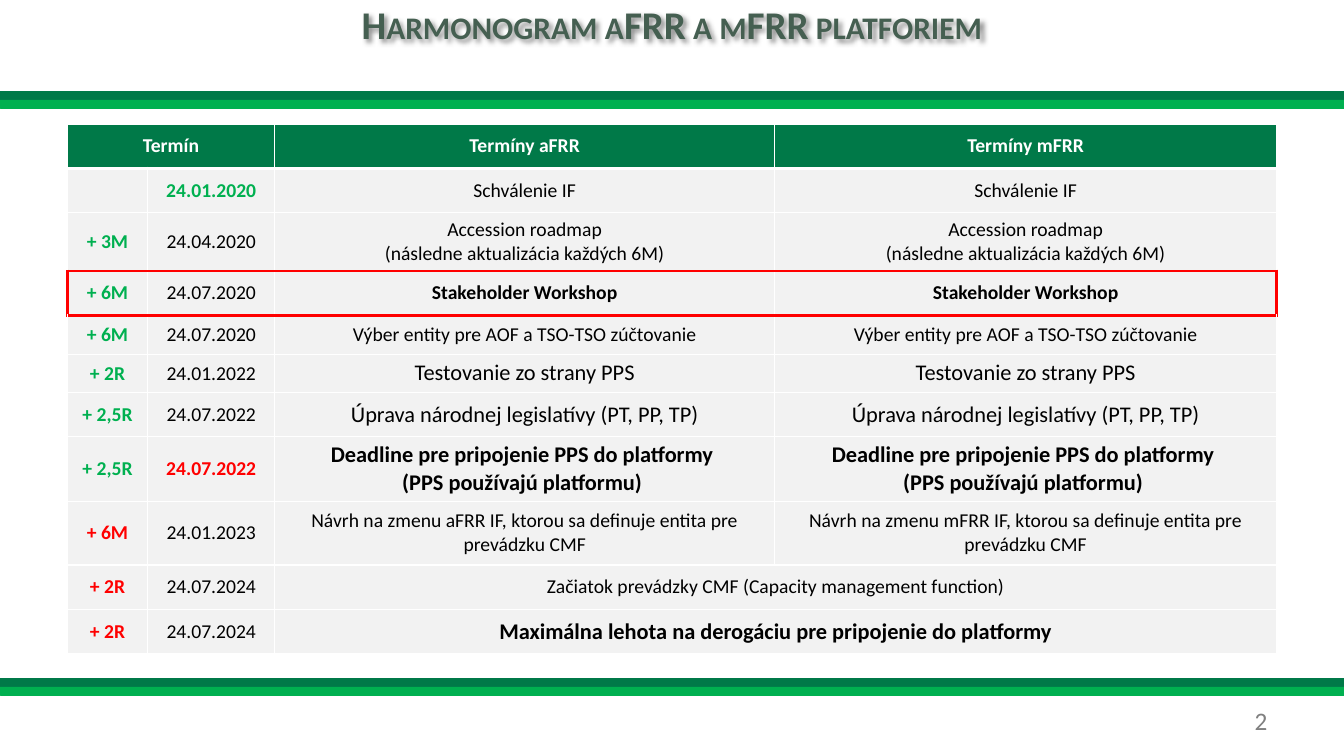
from lxml.etree import SubElement
from pptx import Presentation
from pptx.dml.color import RGBColor
from pptx.enum.shapes import MSO_SHAPE as Shape
from pptx.enum.text import MSO_ANCHOR as Anchor, MSO_AUTO_SIZE as AutoSize, PP_ALIGN as Align
from pptx.oxml import parse_xml
from pptx.oxml.ns import nsdecls, qn
from pptx.util import Pt

COLORS = {
    "dark": "007948", "green": "00B050", "red": "FF0000", "title": "455F51",
    "cell": "F2F2F2", "white": "FFFFFF", "black": "000000", "gray": "808080",
}
FONT = "Calibri"
PAGE_WIDTH, PAGE_HEIGHT = 960, 540
COLUMN_WIDTHS = [57.6, 90.7, 357.1, 358.6]
ROW_HEIGHTS = [31.7, 31.7, 41.5, 31.7, 28, 27, 31.7, 46.3, 45.4, 31.7, 31.7]
HIGHLIGHT_ROW = 3
ROADMAP = "Accession roadmap\n(následne aktualizácia každých 6M)"
DEADLINE = "Deadline pre pripojenie PPS do platformy \n(PPS používajú platformu) "
CMF_CHANGE = "Návrh na zmenu {} IF, ktorou sa definuje entita pre prevádzku CMF"
CMF_START = "Začiatok prevádzky CMF (Capacity management function)"
DEROGATION = "Maximálna lehota na derogáciu pre pripojenie do platformy"

# Offset, its colour, date, date colour, milestone texts, size, bold; one text spans both columns
MILESTONES = [
    ("", "green", "24.01.2020", "green", ["Schválenie IF"] * 2, 14, False),
    ("+ 3M", "green", "24.04.2020", "black", [ROADMAP] * 2, 14, False),
    ("+ 6M", "green", "24.07.2020", "black", ["Stakeholder Workshop"] * 2, 14, True),
    ("+ 6M", "green", "24.07.2020", "black",
     ["Výber entity pre AOF a TSO-TSO zúčtovanie"] * 2, 14, False),
    ("+ 2R", "green", "24.01.2022", "black", ["Testovanie zo strany PPS"] * 2, 16, False),
    ("+ 2,5R", "green", "24.07.2022", "black",
     ["Úprava národnej legislatívy (PT, PP, TP)"] * 2, 16, False),
    ("+ 2,5R", "green", "24.07.2022", "red", [DEADLINE] * 2, 16, True),
    ("+ 6M", "red", "24.01.2023", "black",
     [CMF_CHANGE.format(name) for name in ("aFRR", "mFRR")], 14, False),
    ("+ 2R", "red", "24.07.2024", "black", [CMF_START], 14, False),
    ("+ 2R", "red", "24.07.2024", "black", [DEROGATION], 16, True),
]


def rgb(name):
    return RGBColor.from_string(COLORS[name])


def write(frame, text, size, color, bold=False, align=Align.CENTER):
    frame.text = text
    frame.word_wrap = True
    for para in frame.paragraphs:
        para.alignment = align
        para.font.name = FONT
        para.font.size = Pt(size)
        para.font.bold = bold
        para.font.color.rgb = rgb(color)


def add_title(page, left, top, width, height):
    title = page.shapes.title
    title.left, title.top, title.width, title.height = map(Pt, (left, top, width, height))
    frame = title.text_frame
    write(frame, "Harmonogram aFRR a mFRR platforiem", 28, "title", True)
    frame.auto_size = AutoSize.NONE
    frame.vertical_anchor = Anchor.TOP
    # Small capitals and a soft shadow
    frame.paragraphs[0].font._element.set("cap", "small")
    title._element.spPr.append(parse_xml(
        f'<a:effectLst {nsdecls("a")}><a:outerShdw blurRad="38100" dist="38100" dir="2700000">'
        '<a:srgbClr val="000000"><a:alpha val="43000"/></a:srgbClr></a:outerShdw></a:effectLst>'))


def add_double_band(page, left, top, width, height):
    half = height / 2
    for index, color in enumerate(("dark", "green")):
        band = page.shapes.add_shape(
            Shape.RECTANGLE, Pt(left), Pt(top + index * half), Pt(width), Pt(half))
        band.shadow.inherit = False
        band.fill.solid()
        band.fill.fore_color.rgb = rgb(color)
        band.line.color.rgb = rgb(color)
        band.line.width = Pt(0.25)


def border_style(side, row, column):
    above_or_below = {"T": row - 1, "B": row + 1}.get(side)
    if row == HIGHLIGHT_ROW:
        red = side in "TB" or (side, column) in (("L", 0), ("R", 3))
    else:
        red = above_or_below == HIGHLIGHT_ROW
    if red:
        return "red", 2.25
    return "white", 3 if (side, row) in (("B", 0), ("T", 1)) else 1


def style_cell(cell, row, column):
    cell.vertical_anchor = Anchor.MIDDLE
    cell.fill.solid()
    cell.fill.fore_color.rgb = rgb("cell" if row else "dark")
    properties = cell._tc.get_or_add_tcPr()
    for index, side in enumerate("LRTB"):
        color, width = border_style(side, row, column)
        line = SubElement(properties, qn(f"a:ln{side}"), w=str(int(Pt(width))))
        SubElement(SubElement(line, qn("a:solidFill")), qn("a:srgbClr"), val=COLORS[color])
        properties.insert(index, line)


def add_schedule(page, left, top, width, height):
    rows, columns = len(ROW_HEIGHTS), len(COLUMN_WIDTHS)
    table = page.shapes.add_table(
        rows, columns, Pt(left), Pt(top), Pt(width), Pt(height)).table
    for column, size in zip(table.columns, COLUMN_WIDTHS):
        column.width = Pt(size)
    for row, size in zip(table.rows, ROW_HEIGHTS):
        row.height = Pt(size)
    for row in range(rows):
        for column in range(columns):
            style_cell(table.cell(row, column), row, column)

    # Header
    table.cell(0, 0).merge(table.cell(0, 1))
    for column, text in ((0, "Termín"), (2, "Termíny aFRR"), (3, "Termíny mFRR")):
        write(table.cell(0, column).text_frame, text, 14, "white", True)

    # Milestones
    for row, (offset, offset_color, date, date_color, texts, size, bold) in enumerate(
            MILESTONES, start=1):
        write(table.cell(row, 0).text_frame, offset, 14, offset_color, True)
        write(table.cell(row, 1).text_frame, date, 14, date_color, date_color != "black")
        if len(texts) == 1:
            table.cell(row, 2).merge(table.cell(row, 3))
        for column, text in enumerate(texts, start=2):
            write(table.cell(row, column).text_frame, text, size, "black", bold)


def add_page_number(page, left, top, width, height):
    box = page.shapes.add_textbox(Pt(left), Pt(top), Pt(width), Pt(height))
    write(box.text_frame, "2", 18, "gray", align=Align.RIGHT)
    box.text_frame.vertical_anchor = Anchor.MIDDLE


def main():
    deck = Presentation()
    deck.slide_width, deck.slide_height = Pt(PAGE_WIDTH), Pt(PAGE_HEIGHT)
    page = deck.slides.add_slide(deck.slide_layouts[5])
    for top in (65.4, 484.6):
        add_double_band(page, 0, top, PAGE_WIDTH, 12)
    add_page_number(page, 688.3, 500.4, 224, 28.8)
    add_title(page, 48, -3.6, 864, 66)
    add_schedule(page, 48, 88.6, sum(COLUMN_WIDTHS), sum(ROW_HEIGHTS))
    deck.save("out.pptx")


if __name__ == "__main__":
    main()
